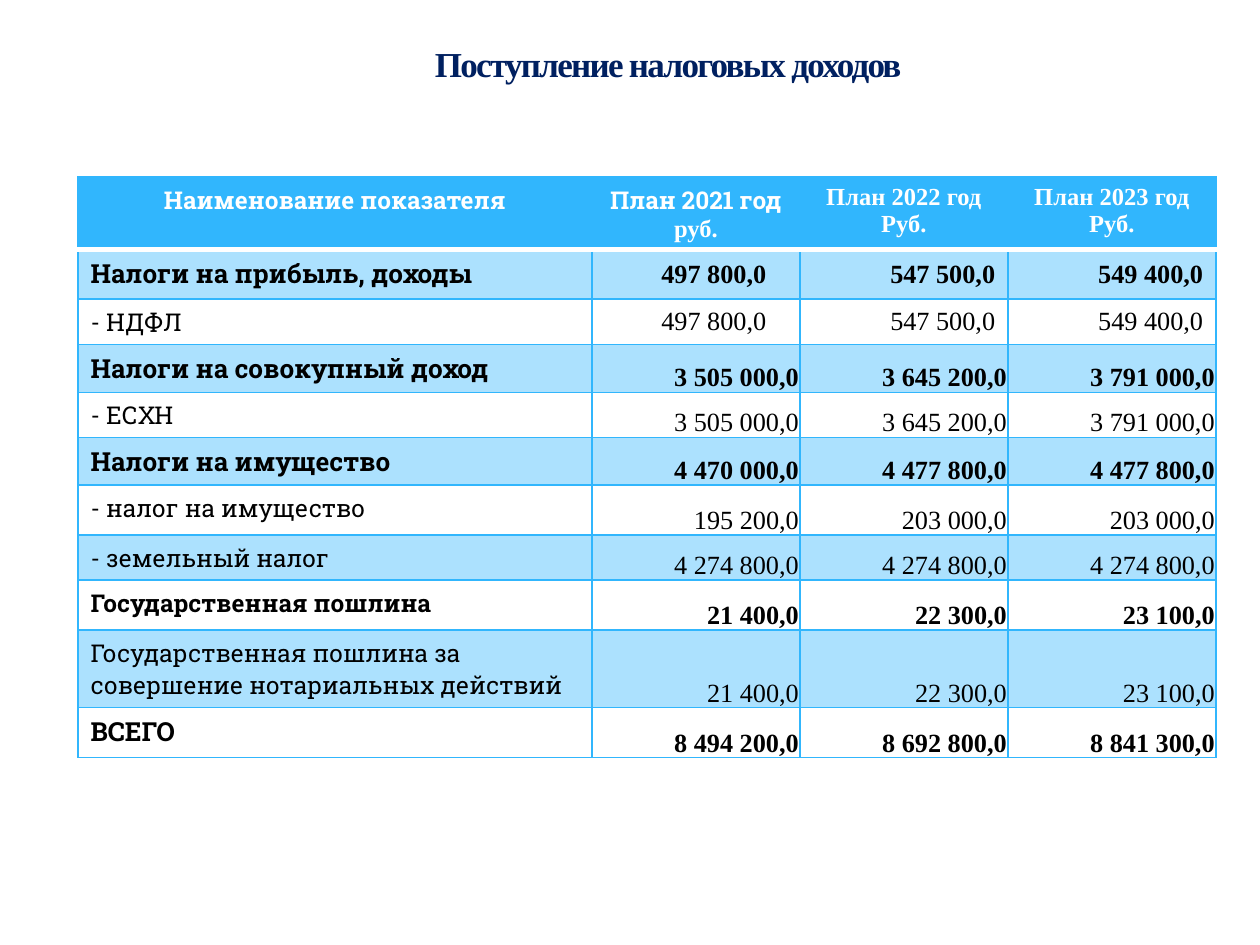
from lxml.etree import SubElement
from pptx import Presentation
from pptx.dml.color import RGBColor
from pptx.enum.text import MSO_ANCHOR as Anchor, PP_ALIGN as Align
from pptx.oxml.ns import qn
from pptx.util import Pt

PX = 9144000 // 1260  # EMU in one px, 126 px to the inch
COLORS = {"navy": "002060", "sky": "31B6FD", "white": "FFFFFF", "black": "000000"}
SLAB, TIMES = "Roboto Slab", "Times New Roman"

TITLE = "Поступление налоговых доходов"
HEAD = [
    [("Наименование показателя", SLAB)],
    [("План 2021 год", SLAB), ("руб.", TIMES)],
    [("План 2022 год", TIMES), ("Руб.", TIMES)],
    [("План 2023 год", TIMES), ("Руб.", TIMES)],
]
# label, label size, bold, height in px, values
ROWS = [
    ("Налоги на прибыль, доходы", 15, True, 50, ["497 800,0\t", "547 500,0", "549 400,0"]),
    ("- НДФЛ", 14, False, 45, ["497 800,0\t", "547 500,0", "549 400,0"]),
    ("Налоги на совокупный доход", 15, True, 48, ["3 505 000,0", "3 645 200,0", "3 791 000,0"]),
    ("- ЕСХН", 14, False, 42, ["3 505 000,0", "3 645 200,0", "3 791 000,0"]),
    ("Налоги на имущество", 15, True, 43, ["4 470 000,0", "4 477 800,0", "4 477 800,0"]),
    ("- налог на имущество", 14, False, 50, ["195 200,0", "203 000,0", "203 000,0"]),
    ("- земельный налог", 14, False, 45, ["4 274 800,0", "4 274 800,0", "4 274 800,0"]),
    ("Государственная пошлина", 14, True, 50, ["21 400,0", "22 300,0", "23 100,0"]),
    ("Государственная пошлина за совершение нотариальных действий", 14, False, 69,
     ["21 400,0", "22 300,0", "23 100,0"]),
    ("ВСЕГО", 15, True, 50, ["8 494 200,0", "8 692 800,0", "8 841 300,0"]),
]
COLS = [514, 208, 208, 208]
HEAD_H = 69
MID_ROWS = 2  # first rows have centred values, the rest sit at the bottom


def style(para, face, size, bold, color, align):
    para.alignment = align
    for run in para.runs:
        font = run.font
        font.name, font.size, font.bold = face, Pt(size), bold
        font.color.rgb = RGBColor.from_string(COLORS[color])


def edge(cell, sides):
    """Draw cell borders; sides maps L, R, T, B to (color, points)."""
    props = cell._tc.get_or_add_tcPr()
    for pos, side in enumerate("LRTB"):
        color, width = sides[side]
        line = SubElement(props, qn(f"a:ln{side}"), w=str(Pt(width)))
        fill = SubElement(line, qn("a:solidFill"))
        SubElement(fill, qn("a:srgbClr"), val=COLORS[color])
        props.insert(pos, line)


def paint(cell, alpha=100):
    cell.fill.solid()
    cell.fill.fore_color.rgb = RGBColor.from_string(COLORS["sky"])
    if alpha < 100:
        tint = cell._tc.tcPr.find(".//" + qn("a:srgbClr"))
        SubElement(tint, qn("a:alpha"), val=str(alpha * 1000))


def add_title(slide):
    title = slide.shapes.title
    title.left, title.top, title.width, title.height = (
        n * PX for n in (207, 29, 922, 69))
    frame = title.text_frame
    frame.text = TITLE
    frame.vertical_anchor = Anchor.MIDDLE
    para = frame.paragraphs[0]
    style(para, TIMES, 20, True, "navy", Align.CENTER)
    para.runs[0].font._element.set("spc", "-100")


def add_table(slide):
    heights = [HEAD_H] + [row[3] for row in ROWS]
    table = slide.shapes.add_table(
        len(heights), len(COLS), 78 * PX, 177 * PX,
        sum(COLS) * PX, sum(heights) * PX).table
    for col, width in zip(table.columns, COLS):
        col.width = width * PX
    for row, height in zip(table.rows, heights):
        row.height = height * PX

    thin, rule = ("sky", 1), ("white", 3)
    for col, lines in enumerate(HEAD):
        cell = table.cell(0, col)
        cell.text = "\n".join(text for text, _ in lines)
        for para, (_, face) in zip(cell.text_frame.paragraphs, lines):
            style(para, face, 14, True, "white", Align.CENTER)
        paint(cell)
        edge(cell, {"L": thin, "R": thin, "T": thin, "B": rule})

    for row, (label, size, bold, _, values) in enumerate(ROWS, 1):
        for col, text in enumerate([label] + values):
            cell = table.cell(row, col)
            cell.text = text
            para = cell.text_frame.paragraphs[0]
            if col == 0:
                style(para, SLAB, size, bold, "black", Align.LEFT)
            else:
                style(para, TIMES, 15, bold, "black", Align.RIGHT)
                cell.vertical_anchor = Anchor.MIDDLE
                if row > MID_ROWS:
                    cell.vertical_anchor = Anchor.BOTTOM
                    cell.margin_left = cell.margin_right = cell.margin_top = PX
                    cell.margin_bottom = 0
            if row % 2:
                paint(cell, 40)
            else:
                cell.fill.background()
            top = rule if row == 1 else thin
            edge(cell, {"L": thin, "R": thin, "T": top, "B": thin})


def main():
    deck = Presentation()
    deck.slide_width, deck.slide_height = 1260 * PX, 945 * PX
    slide = deck.slides.add_slide(deck.slide_layouts[5])
    add_table(slide)
    add_title(slide)
    deck.save("out.pptx")


if __name__ == "__main__":
    main()
